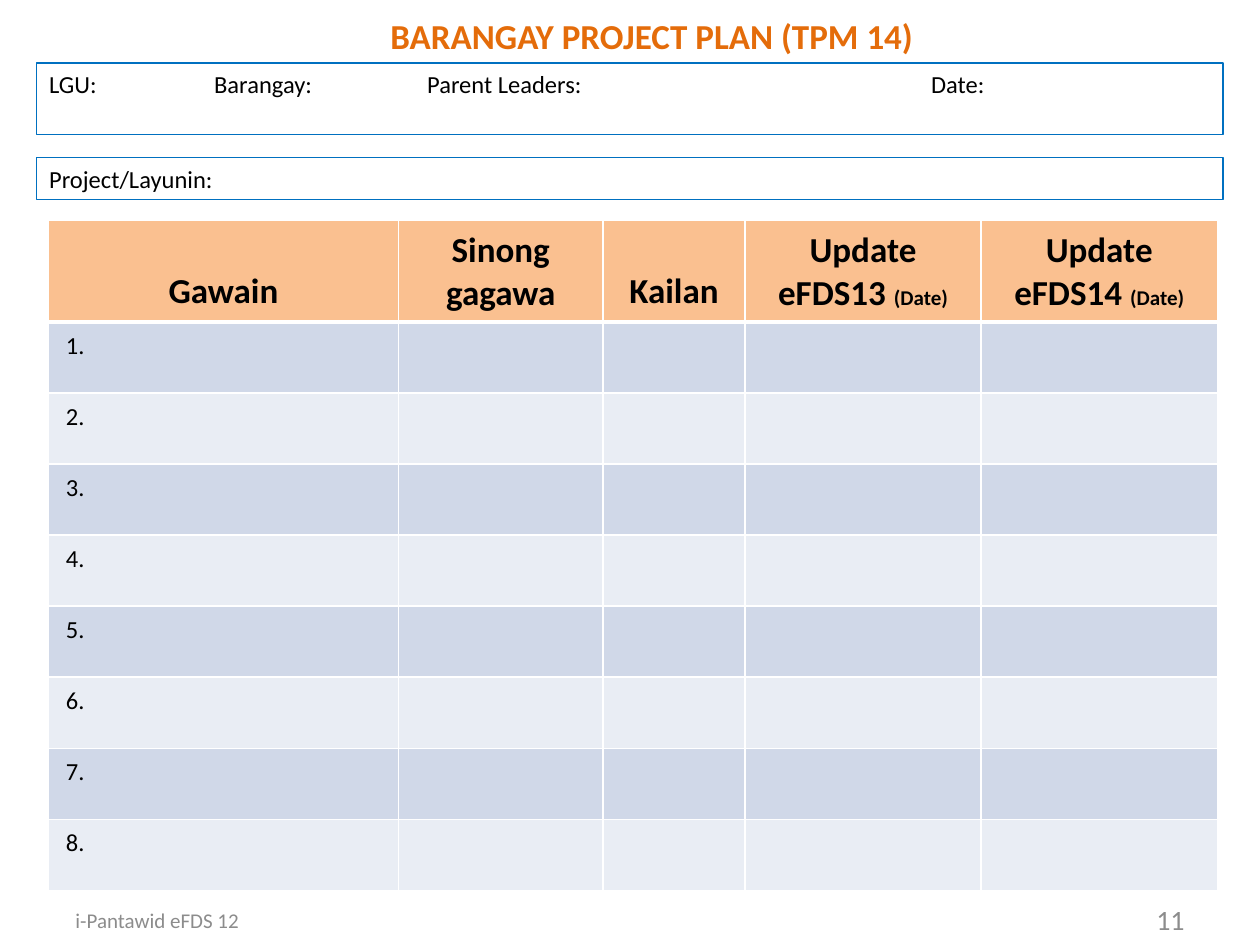
import pptx
import pptx.util
import pptx.dml.color
import pptx.enum.shapes
import pptx.enum.text
import pptx.oxml
import pptx.oxml.ns

Pt = pptx.util.Pt
Align = pptx.enum.text.PP_ALIGN
Anchor = pptx.enum.text.MSO_ANCHOR


def color(code):
    return pptx.dml.color.RGBColor.from_string(code)


def node(xml):
    return pptx.oxml.parse_xml(xml.replace(">", f" {pptx.oxml.ns.nsdecls('a')}>", 1))


class Form:
    """Draws the parts of a project plan form on one slide."""

    font = "Calibri"
    ink = "000000"
    edge = "0070C0"
    head = "FAC090"
    bands = ("D0D8E8", "E9EDF4")

    def __init__(self, slide):
        self.slide = slide

    def style(self, run, size, ink, bold=False):
        run.font.name = self.font
        run.font.size = Pt(size)
        run.font.bold = bold
        run.font.color.rgb = color(ink)

    def put(self, frame, text, size, ink, bold=False, align=Align.LEFT):
        frame.text = text
        para = frame.paragraphs[0]
        para.alignment = align
        for run in para.runs:
            self.style(run, size, ink, bold)
        return para

    def label(self, area, text, size, ink, bold=False, align=Align.LEFT,
              anchor=Anchor.TOP, wrap=True):
        frame = self.slide.shapes.add_textbox(*map(Pt, area)).text_frame
        frame.word_wrap = wrap
        frame.vertical_anchor = anchor
        self.put(frame, text, size, ink, bold, align)

    def field(self, area, names, stops=()):
        kind = pptx.enum.shapes.MSO_SHAPE.RECTANGLE
        box = self.slide.shapes.add_shape(kind, *map(Pt, area))
        box.shadow.inherit = False
        box.fill.background()
        box.line.color.rgb = color(self.edge)
        box.line.width = Pt(0.75)
        box.text_frame.word_wrap = True
        box.text_frame.vertical_anchor = Anchor.TOP
        para = self.put(box.text_frame, "\t".join(names), 14, self.ink)
        if stops:
            tabs = "".join(f'<a:tab pos="{Pt(stop)}" algn="l"/>' for stop in stops)
            para._p.get_or_add_pPr().append(node(f"<a:tabLst>{tabs}</a:tabLst>"))

    def cell(self, cell, fill, base=1):
        for side, width in zip("LRTB", (1, 1, 1, base)):
            cell._tc.get_or_add_tcPr().append(node(
                f'<a:ln{side} w="{Pt(width)}"><a:solidFill>'
                f'<a:srgbClr val="FFFFFF"/></a:solidFill></a:ln{side}>'))
        cell.fill.solid()
        cell.fill.fore_color.rgb = color(fill)
        cell.margin_left = cell.margin_right = Pt(10)
        cell.margin_top = cell.margin_bottom = Pt(5)

    def table(self, left, top, heads, count, tall, high):
        area = (left, top, sum(wide for _, _, wide in heads), tall + count * high)
        grid = self.slide.shapes.add_table(count + 1, len(heads), *map(Pt, area)).table
        for row in grid.rows:
            row.height = Pt(high)
        grid.rows[0].height = Pt(tall)
        for col, (title, note, wide) in enumerate(heads):
            grid.columns[col].width = Pt(wide)
            cell = grid.cell(0, col)
            self.cell(cell, self.head, 3)
            cell.vertical_anchor = Anchor.BOTTOM
            para = self.put(cell.text_frame, title, 20, self.ink, True, Align.CENTER)
            if note:
                run = para.add_run()
                run.text = note
                self.style(run, 12, self.ink, True)
            for row in range(1, count + 1):
                self.cell(grid.cell(row, col), self.bands[(row - 1) % 2])
        for row in range(1, count + 1):
            self.put(grid.cell(row, 0).text_frame, f"{row}.", 14, self.ink)


def main():
    deck = pptx.Presentation()
    deck.slide_width, deck.slide_height = Pt(720), Pt(540)
    form = Form(deck.slides.add_slide(deck.slide_layouts[6]))
    form.label((216, 5, 315.4, 31.5), "BARANGAY PROJECT PLAN (TPM 14)", 20,
               "E46C0A", bold=True, wrap=False)
    form.field((21, 36, 678, 41), ("LGU:", "Barangay:", "Parent Leaders:", "Date:"),
               (94.3, 216, 504))
    form.label((36, 511, 168, 29), "i-Pantawid eFDS 12", 12, "8C8C8C",
               anchor=Anchor.MIDDLE)
    form.label((516, 511, 168, 29), "11", 16, "8C8C8C", align=Align.RIGHT,
               anchor=Anchor.MIDDLE)
    form.field((21, 90, 678, 24.2), ("Project/Layunin:",))
    heads = (("Gawain", "", 200), ("Sinong gagawa", "", 117), ("Kailan", "", 81),
             ("Update eFDS13 ", "(Date)", 135), ("Update eFDS14 ", "(Date)", 135))
    form.table(27.7, 126, heads, 8, 58, 40.6)
    deck.save("out.pptx")


if __name__ == "__main__":
    main()
